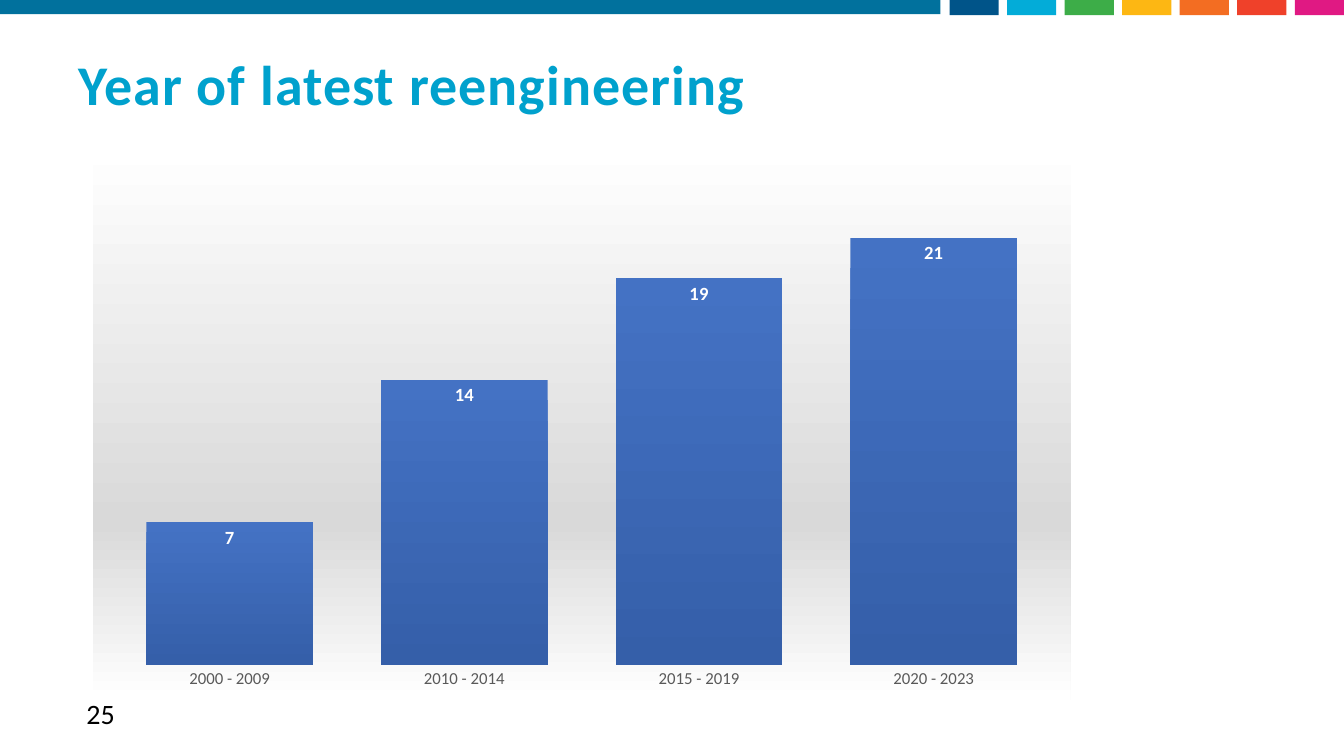
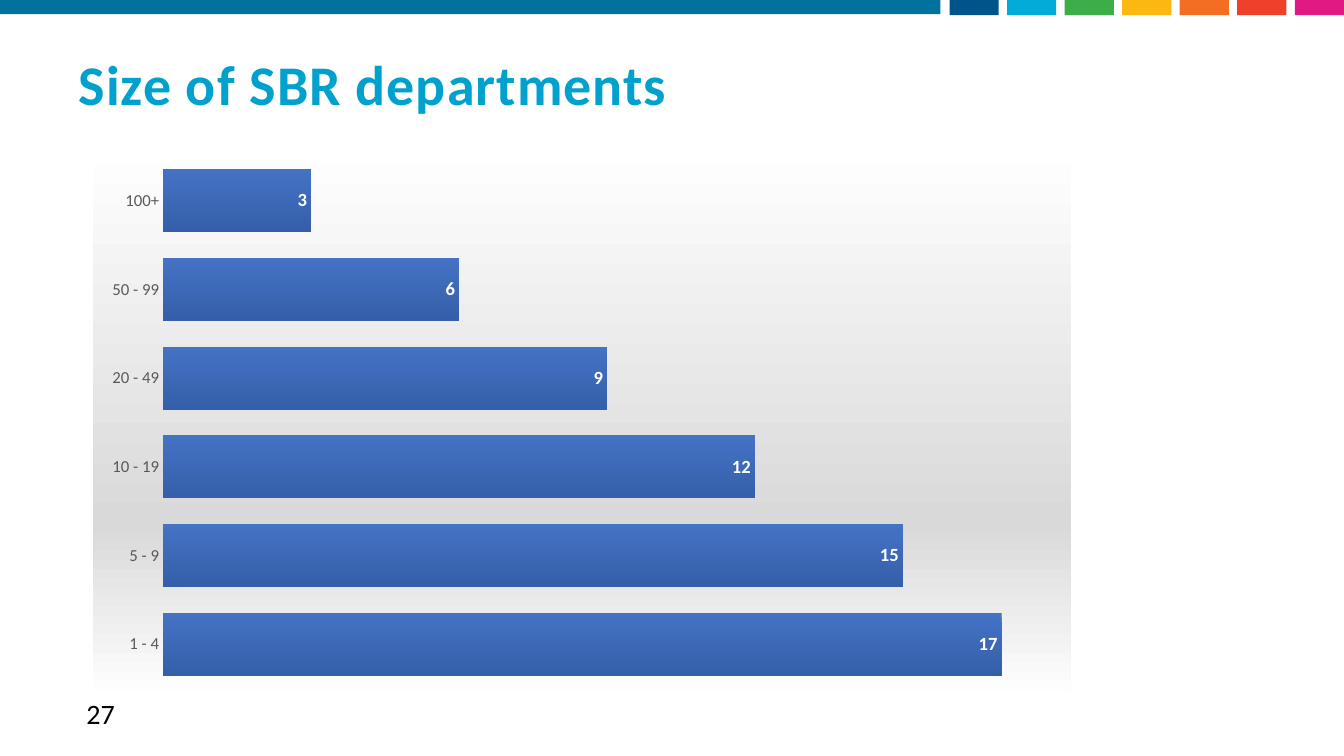
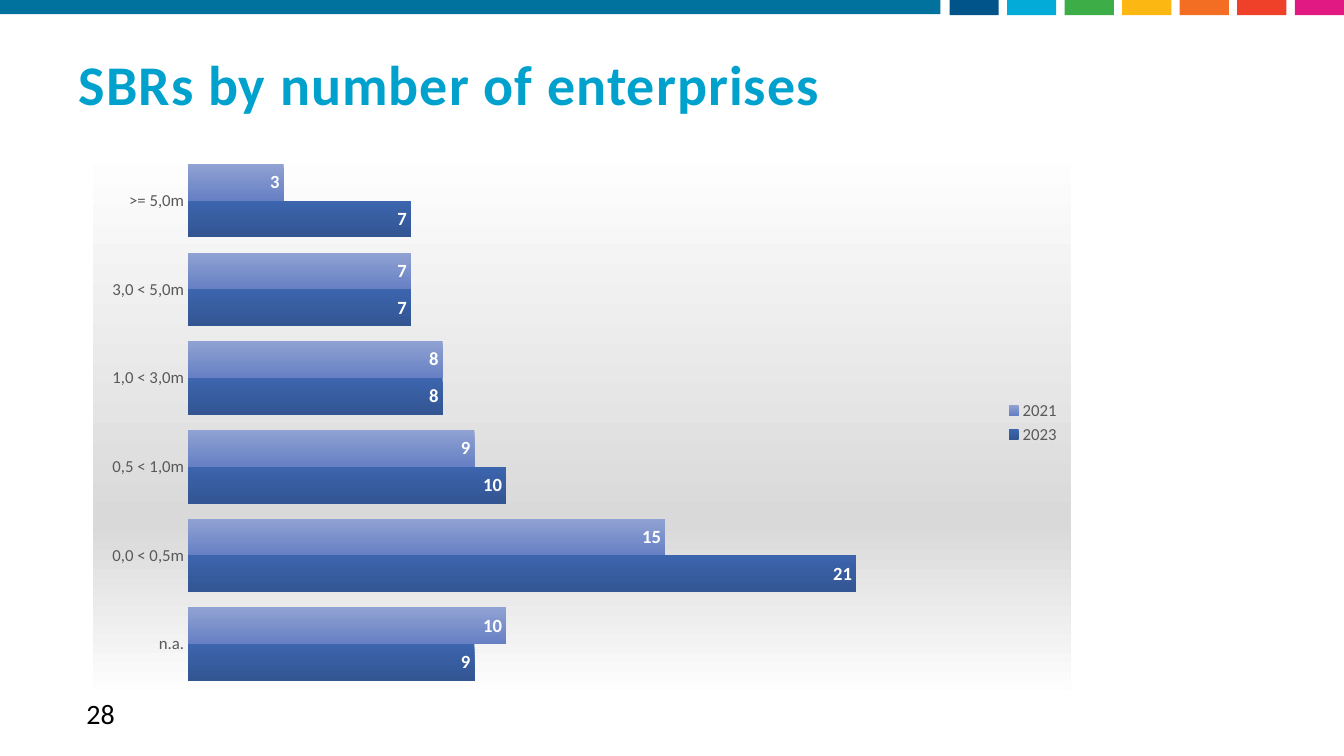
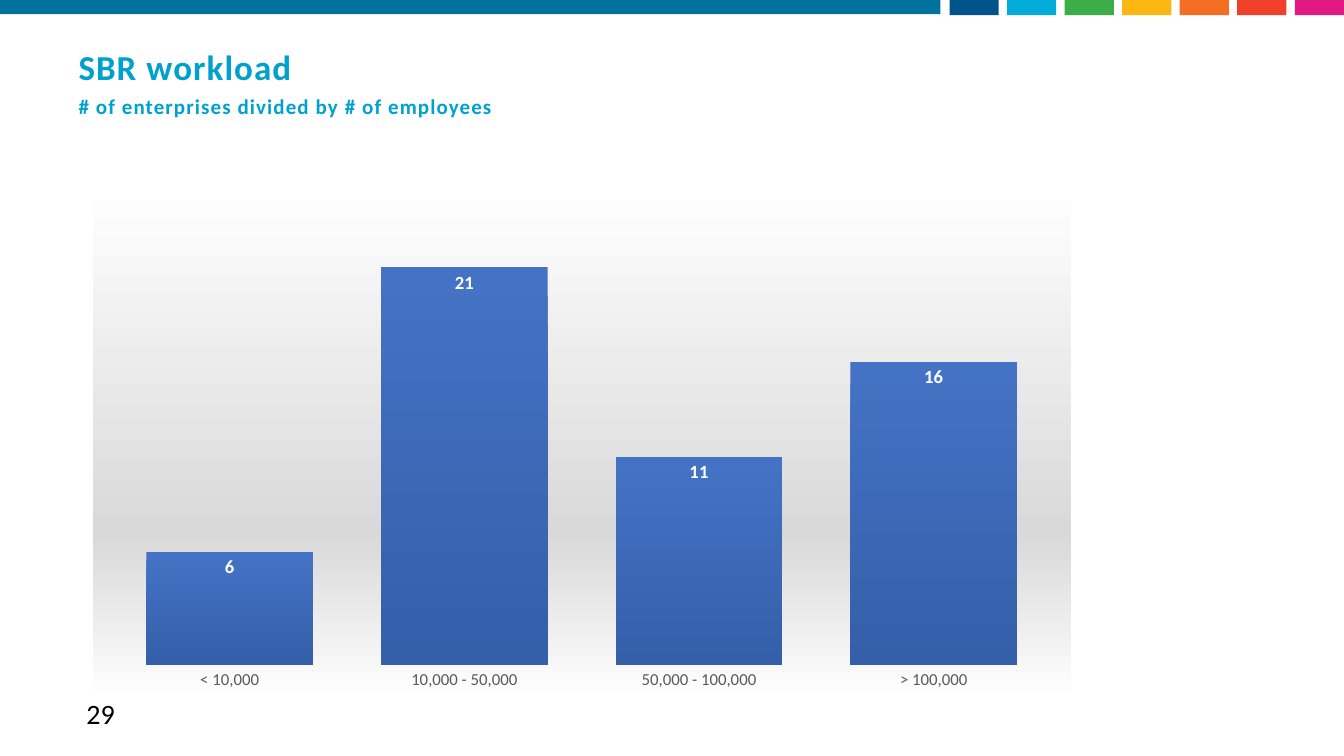
from dataclasses import dataclass

from lxml.etree import SubElement
from pptx import Presentation
from pptx.chart.data import CategoryChartData
from pptx.dml.color import RGBColor
from pptx.enum.chart import (XL_CHART_TYPE, XL_LABEL_POSITION,
                             XL_LEGEND_POSITION, XL_TICK_MARK)
from pptx.enum.shapes import MSO_SHAPE
from pptx.enum.text import MSO_ANCHOR
from pptx.oxml import parse_xml
from pptx.oxml.ns import nsdecls, qn
from pptx.util import Cm, Pt


@dataclass(frozen=True)
class Theme:
    face: str = "Calibri"
    # Colours
    title: str = "00A1CD"
    ink: str = "000000"
    grey: str = "595959"
    white: str = "FFFFFF"
    band: str = "01719D"
    tiles: tuple = ("005489", "03ACD8", "3DAD48", "FDB713",
                    "F36D22", "EF412A", "E01983")
    panel: tuple = ((0, "FFFFFF"), (68, "D9D9D9"), (100, "FFFFFF"))
    blue: tuple = ((0, "4472C4"), (100, "355FA9"))
    dark: tuple = ((0, "3C65AE"), (100, "335592"))
    light: tuple = ((0, "90A2D3"), (100, "6780C4"))
    # Type sizes in points
    big: float = 40
    mid: float = 25
    small: float = 15
    page: float = 20
    axis: float = 12
    label: float = 13.3
    base: float = 10


def put(item, **values):
    """Set each named value on the item."""
    for name, value in values.items():
        setattr(item, name, value)


def shade(props, stops):
    """Put a top-to-bottom gradient first in a shape property element."""
    grad = props.makeelement(qn("a:gradFill"), {"rotWithShape": "1"})
    group = SubElement(grad, qn("a:gsLst"))
    for spot, color in stops:
        stop = SubElement(group, qn("a:gs"), pos=str(spot * 1000))
        SubElement(stop, qn("a:srgbClr"), val=color)
    SubElement(grad, qn("a:lin"), ang="5400000", scaled="0")
    props.insert(0, grad)


class Deck:
    def __init__(self, theme):
        self.theme = theme
        self.file = Presentation()
        put(self.file, slide_width=Cm(33.87), slide_height=Cm(19.05))
        self.slide = None

    def start(self, page, lines, spacing=0.9):
        """Add a slide with the parts that all slides share."""
        self.slide = self.file.slides.add_slide(self.file.slide_layouts[6])
        self.bands()
        self.title(lines, spacing)
        self.number(page)

    def font(self, font, size, color, bold=False):
        put(font, name=self.theme.face, size=Pt(size), bold=bold)
        font.color.rgb = RGBColor.from_string(color)

    def block(self, left, width, height, color):
        shape = self.slide.shapes.add_shape(
            MSO_SHAPE.RECTANGLE, Cm(left), 0, Cm(width), Cm(height))
        shape.shadow.inherit = False
        shape.fill.solid()
        shape.fill.fore_color.rgb = RGBColor.from_string(color)
        shape.line.fill.background()

    def bands(self):
        self.block(0, 23.7, 0.36, self.theme.band)
        for i, color in enumerate(self.theme.tiles):
            self.block(23.93 + 1.45 * i, 1.24, 0.38, color)

    def frame(self, left, top, width, height, anchor):
        box = self.slide.shapes.add_textbox(
            Cm(left), Cm(top), Cm(width), Cm(height))
        put(box.text_frame, word_wrap=True, vertical_anchor=anchor)
        return box.text_frame

    def title(self, lines, spacing):
        frame = self.frame(1.73, 1.27, 28.27, 1.85, MSO_ANCHOR.MIDDLE)
        for i, (text, size) in enumerate(lines):
            para = frame.add_paragraph() if i else frame.paragraphs[0]
            put(para, line_spacing=spacing, space_before=Pt(10 if i else 0))
            run = para.add_run()
            run.text = text
            self.font(run.font, size, self.theme.title, True)
            run._r.get_or_add_rPr().set("spc", "80")

    def number(self, page):
        frame = self.frame(1.93, 17.42, 7.62, 1.02, MSO_ANCHOR.TOP)
        run = frame.paragraphs[0].add_run()
        run.text = str(page)
        self.font(run.font, self.theme.page, self.theme.ink)

    def chart(self, kind, cats, series, peak, top=3.66):
        """Series holds a name, values and gradient for each set of bars."""
        look = self.theme
        data = CategoryChartData()
        data.categories = cats
        for name, values, _ in series:
            data.add_series(name, values)
        chart = self.slide.shapes.add_chart(
            kind, Cm(2.34), Cm(top), Cm(24.64), Cm(17.63 - top), data).chart
        put(chart, has_title=False, has_legend=len(series) > 1)
        self.font(chart.font, look.base, look.ink)

        # Panel behind the bars
        panel = parse_xml(
            f'<c:spPr {nsdecls("c", "a")}><a:ln><a:noFill/></a:ln></c:spPr>')
        shade(panel, look.panel)
        chart._chartSpace.find(qn("c:txPr")).addprevious(panel)

        # Axes
        put(chart.value_axis, visible=False, has_major_gridlines=False,
            minimum_scale=0, maximum_scale=peak)
        axis = chart.category_axis
        put(axis, major_tick_mark=XL_TICK_MARK.NONE,
            minor_tick_mark=XL_TICK_MARK.NONE, has_major_gridlines=False)
        axis.format.line.fill.background()
        self.font(axis.tick_labels.font, look.axis, look.grey)

        # Bars and their labels
        plot = chart.plots[0]
        put(plot, gap_width=41, overlap=0, vary_by_categories=False)
        for bars, (_, _, stops) in zip(plot.series, series):
            bars.invert_if_negative = False
            bars.format.line.fill.background()
            shade(bars._element.get_or_add_spPr(), stops)
            labels = bars.data_labels
            put(labels, show_value=True,
                position=XL_LABEL_POSITION.INSIDE_END)
            self.font(labels.font, look.label, look.white, True)

        if chart.has_legend:
            put(chart.legend, position=XL_LEGEND_POSITION.RIGHT,
                include_in_layout=False)
            self.font(chart.legend.font, look.axis, look.grey)


def main():
    look = Theme()
    deck = Deck(look)
    column = XL_CHART_TYPE.COLUMN_CLUSTERED
    bar = XL_CHART_TYPE.BAR_CLUSTERED

    # Year of change
    deck.start(25, [("Year of latest reengineering", look.big)])
    deck.chart(column,
               ["2000 - 2009", "2010 - 2014", "2015 - 2019", "2020 - 2023"],
               [("Series 1", (7, 14, 19, 21), look.blue)], 25)

    # Staff size
    deck.start(27, [("Size of SBR departments", look.big)])
    deck.chart(bar,
               ["1 - 4", "5 - 9", "10 - 19", "20 - 49", "50 - 99", "100+"],
               [("Series 1", (17, 15, 12, 9, 6, 3), look.blue)], 18)

    # Firm count in two years
    deck.start(28, [("SBRs by number of enterprises", look.big)])
    deck.chart(bar,
               ["n.a.", "0,0 < 0,5m", "0,5 < 1,0m", "1,0 < 3,0m",
                "3,0 < 5,0m", ">= 5,0m"],
               [("2023", (9, 21, 10, 8, 7, 7), look.dark),
                ("2021", (10, 15, 9, 8, 7, 3), look.light)], 25)

    # Workload
    deck.start(29, [("SBR workload", look.mid),
                    ("# of enterprises divided by # of employees",
                     look.small)], 0.7)
    deck.chart(column,
               ["< 10,000", "10,000 - 50,000", "50,000 - 100,000",
                "> 100,000"],
               [("Series 1", (6, 21, 11, 16), look.blue)], 25, 4.57)

    deck.file.save("out.pptx")


if __name__ == "__main__":
    main()
